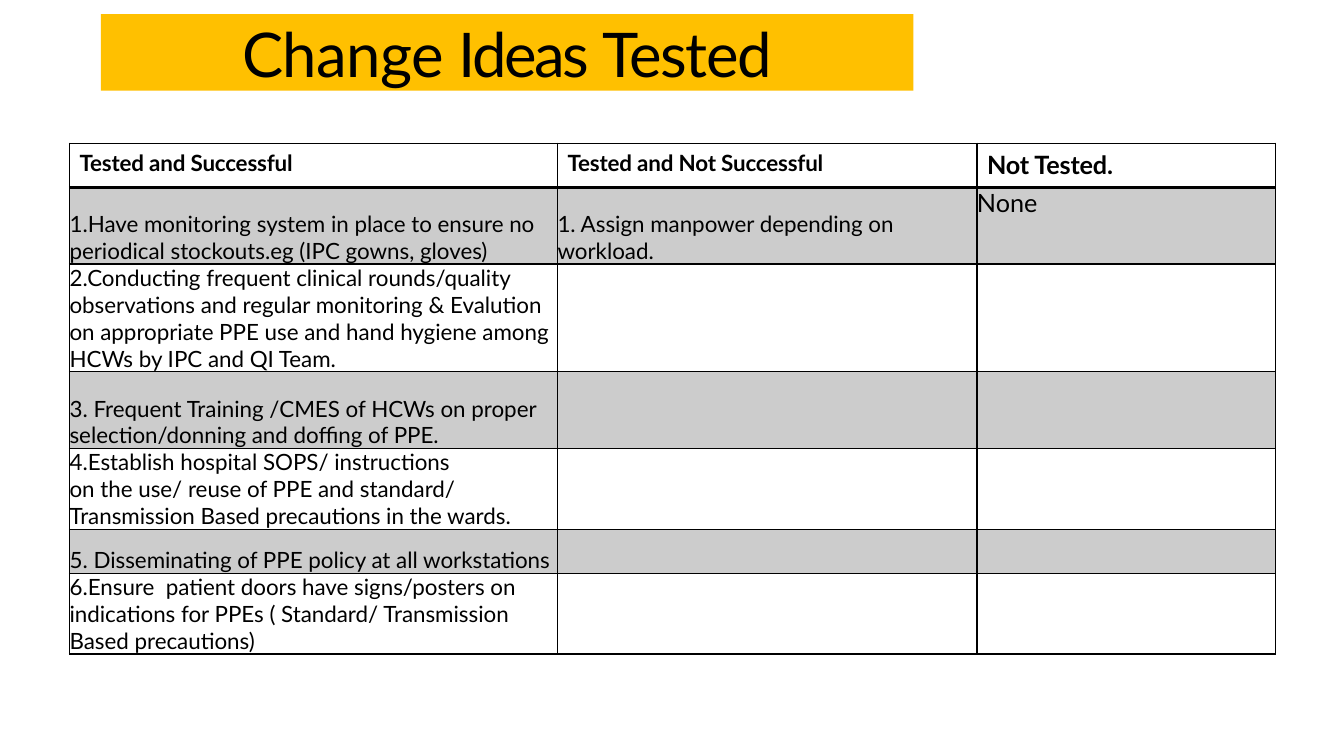
"""Build the slide that lists which change ideas were tested."""
from lxml import etree
from pptx import Presentation
from pptx.dml.color import RGBColor
from pptx.enum.shapes import MSO_SHAPE
from pptx.enum.text import MSO_ANCHOR, PP_ALIGN
from pptx.oxml.ns import qn
from pptx.util import Inches, Pt

RECTANGLE = MSO_SHAPE.RECTANGLE
TOP, MIDDLE, BOTTOM = MSO_ANCHOR.TOP, MSO_ANCHOR.MIDDLE, MSO_ANCHOR.BOTTOM
CENTER, LEFT = PP_ALIGN.CENTER, PP_ALIGN.LEFT

TITLE = [("Change ", -0.5), ("Ideas ", -1.9), ("Tested", -1.1)]
HEADERS = ["Tested and Successful", "Tested and Not Successful", "Not Tested."]
IDEAS = [
    ["1.Have monitoring system in place to ensure no periodical stockouts.eg (IPC gowns, gloves)",
     "1. Assign manpower depending on workload.", "None"],
    ["2.Conducting frequent clinical rounds/quality observations and regular monitoring & Evalution "
     "on appropriate PPE use and hand hygiene among HCWs by IPC and QI Team.", "", ""],
    ["3. Frequent Training /CMES of HCWs on proper selection/donning and doffing of PPE.", "", ""],
    ["4.Establish hospital SOPS/ instructions\von the use/ reuse of PPE and standard/ "
     "Transmission Based precautions in the wards.", "", ""],
    ["5. Disseminating of PPE policy at all workstations", "", ""],
    ["6.Ensure  patient doors have signs/posters on indications for PPEs "
     "( Standard/ Transmission Based precautions)", "", ""],
]
COLUMN_WIDTHS = [4.84, 4.16, 2.96]
ROW_HEIGHTS = [0.44, 0.76, 1.07, 0.76, 0.8, 0.44, 0.8]
TABLE_LEFT, TABLE_TOP = 0.69, 1.42
THEME = {
    "font": "Lato", "ink": "000000", "banner": "FFC000", "band_alpha": 20,
    "title": 44, "body": 16, "last_column": 18, "header_spacing": -0.1,
    "rule": 1, "header_rule": 2,
}


def style_span(span, size, bold=False, spacing=0):
    """Set the font, colour and letter spacing of a run."""
    font = span.font
    font.name, font.size, font.bold = THEME["font"], Pt(size), bold
    font.color.rgb = RGBColor.from_string(THEME["ink"])
    if spacing:
        font._element.set("spc", str(round(spacing * 100)))


def add_color(parent, alpha=None):
    """Append a solid ink fill, optionally transparent."""
    fill = etree.SubElement(parent, qn("a:solidFill"))
    color = etree.SubElement(fill, qn("a:srgbClr"), val=THEME["ink"])
    if alpha is not None:
        etree.SubElement(color, qn("a:alpha"), val=str(alpha * 1000))


def frame_cell(cell, is_header, below_header, shaded):
    """Draw the borders of a cell and its fill."""
    properties = cell._tc.get_or_add_tcPr()
    thick = {"a:lnB": is_header, "a:lnT": below_header}
    for side in ("a:lnL", "a:lnR", "a:lnT", "a:lnB"):
        width = THEME["header_rule"] if thick.get(side) else THEME["rule"]
        add_color(etree.SubElement(properties, qn(side), w=str(Pt(width))))
    if shaded:
        add_color(properties, THEME["band_alpha"])
    else:
        cell.fill.background()


def add_title(page):
    """Add the title banner."""
    banner = page.shapes.add_shape(RECTANGLE, Inches(1), Inches(0.14), Inches(8.06), Inches(0.76))
    banner.shadow.inherit = False
    banner.fill.solid()
    banner.fill.fore_color.rgb = RGBColor.from_string(THEME["banner"])
    banner.line.fill.background()
    frame = banner.text_frame
    frame.word_wrap = True
    frame.vertical_anchor = MIDDLE
    frame.margin_left = frame.margin_right = frame.margin_bottom = 0
    frame.margin_top = Inches(0.01)
    para = frame.paragraphs[0]
    para.alignment = CENTER
    for text, spacing in TITLE:
        span = para.add_run()
        span.text = text
        style_span(span, THEME["title"], spacing=spacing)


def fill_cell(cell, text, is_header, size):
    """Write the text of a cell."""
    cell.margin_left = Inches(0.1 if is_header else 0)
    cell.margin_right = cell.margin_bottom = 0
    cell.margin_top = Inches(0.06 if is_header else 0)
    is_last = size == THEME["last_column"]
    cell.vertical_anchor = TOP if is_header or is_last else BOTTOM
    cell.text = text
    para = cell.text_frame.paragraphs[0]
    para.alignment = LEFT
    para.font.size = Pt(size)
    for span in para.runs:
        style_span(span, size, is_header, THEME["header_spacing"] if is_header else 0)


def add_ideas_table(page):
    """Add the table of change ideas."""
    rows = [HEADERS, *IDEAS]
    table = page.shapes.add_table(
        len(rows), len(HEADERS), Inches(TABLE_LEFT), Inches(TABLE_TOP),
        Inches(sum(COLUMN_WIDTHS)), Inches(sum(ROW_HEIGHTS))).table
    table.first_row = table.horz_banding = False
    for column, width in zip(table.columns, COLUMN_WIDTHS):
        column.width = Inches(width)
    for row_index, texts in enumerate(rows):
        table.rows[row_index].height = Inches(ROW_HEIGHTS[row_index])
        for column_index, text in enumerate(texts):
            cell = table.cell(row_index, column_index)
            is_last = column_index == len(HEADERS) - 1
            size = THEME["last_column" if is_last else "body"]
            fill_cell(cell, text, row_index == 0, size)
            frame_cell(cell, row_index == 0, row_index == 1, row_index % 2 == 1)


def main():
    """Create and save the deck."""
    deck = Presentation()
    deck.slide_width, deck.slide_height = Inches(13.33), Inches(7.5)
    page = deck.slides.add_slide(deck.slide_layouts[6])
    add_title(page)
    add_ideas_table(page)
    deck.save("out.pptx")


if __name__ == "__main__":
    main()
